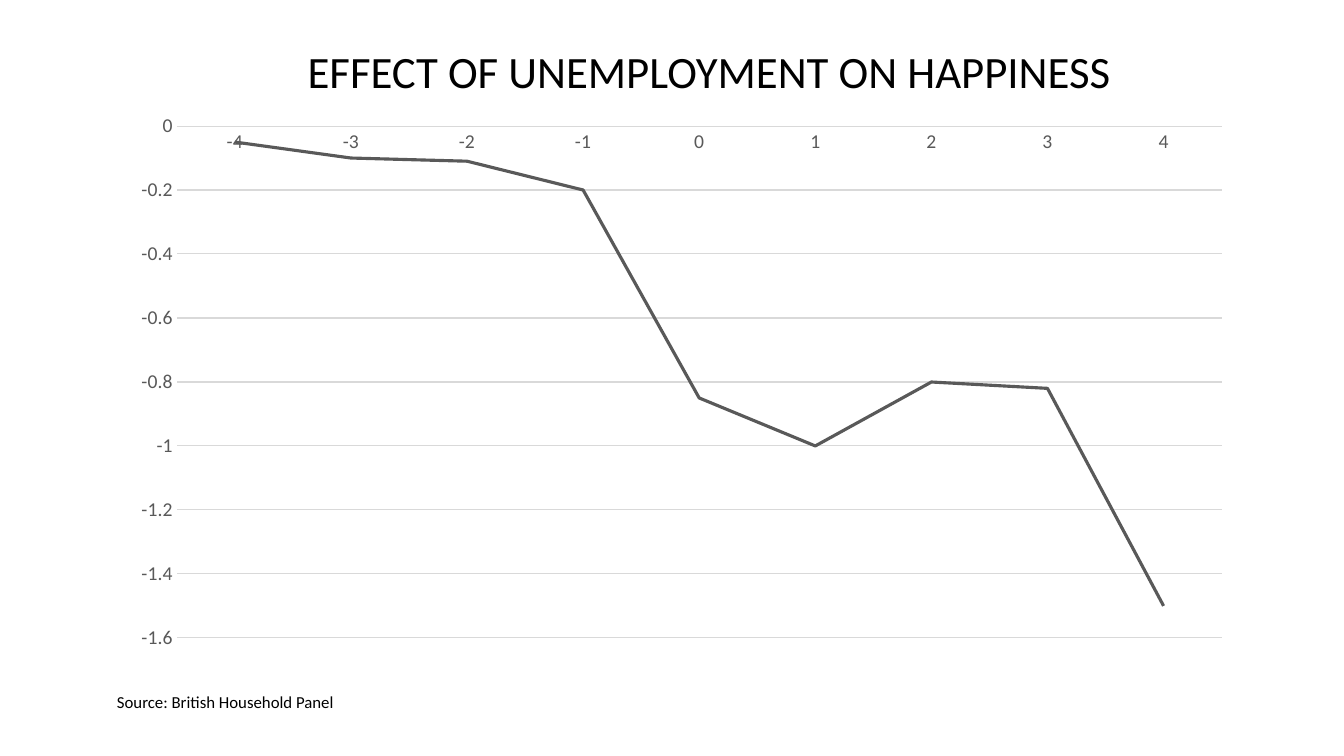
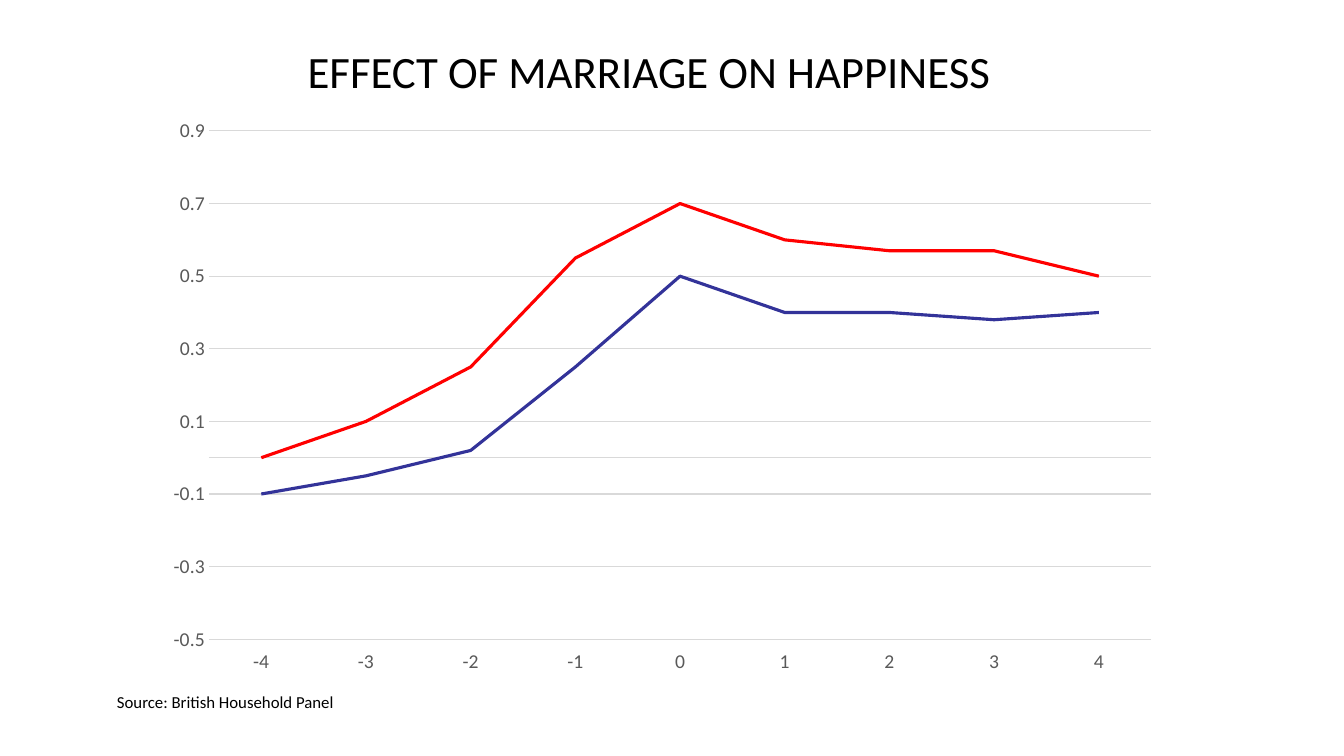
from pptx import Presentation, util as u
from pptx.chart.data import CategoryChartData
from pptx.dml.color import RGBColor
from pptx.enum import chart as ch, text

# Shared style
BLACK = RGBColor(0, 0, 0)
GREY = RGBColor(0x59, 0x59, 0x59)
PALE = RGBColor(0xD9, 0xD9, 0xD9)
BLUE = RGBColor(0x33, 0x33, 0x99)
RED = RGBColor(0xFF, 0, 0)
FACE = "Calibri"
WIDE, HIGH = 13.33, 7.5
HEAD = (3, 0.38, 8.42, 0.64)
FOOT = (1.11, 6.81, 2.28, 0.3)

# Content
SOURCE = "Source: British Household Panel"
YEARS = [str(n) for n in range(-4, 5)]
SLIDES = [
    {
        "title": "EFFECT OF UNEMPLOYMENT ON HAPPINESS",
        "area": (1.18, 1.02, 11.16, 5.54),
        "lines": [(GREY, (-0.05, -0.1, -0.11, -0.2, -0.85, -1, -0.8, -0.82, -1.5))],
        "scale": {},
        "labels": ch.XL_TICK_LABEL_POSITION.NEXT_TO_AXIS,
    },
    {
        "title": "EFFECT OF MARRIAGE ON HAPPINESS",
        "area": (1.52, 0.82, 10.1, 5.98),
        "lines": [
            (BLUE, (-0.1, -0.05, 0.02, 0.25, 0.5, 0.4, 0.4, 0.38, 0.4)),
            (RED, (0, 0.1, 0.25, 0.55, 0.7, 0.6, 0.57, 0.57, 0.5)),
        ],
        "scale": {"minimum_scale": -0.5, "maximum_scale": 1},
        "labels": ch.XL_TICK_LABEL_POSITION.LOW,
    },
]


def put(item, **values):
    for name, value in values.items():
        setattr(item, name, value)


def inches(box):
    return [u.Inches(n) for n in box]


def style(font, size, color):
    put(font, name=FACE, size=u.Pt(size))
    font.color.rgb = color


def ink(line, color, width):
    line.color.rgb = color
    line.width = u.Pt(width)


def write(shape, words, size, wrap):
    frame = shape.text_frame
    frame.text = words
    sides = ("left", "top", "right", "bottom")
    put(frame, word_wrap=wrap, vertical_anchor=text.MSO_ANCHOR.TOP,
        auto_size=text.MSO_AUTO_SIZE.SHAPE_TO_FIT_TEXT,
        **{f"margin_{side}": u.Inches(0.05) for side in sides})
    para = frame.paragraphs[0]
    para.alignment = text.PP_ALIGN.LEFT
    style(para.runs[0].font, size, BLACK)


def plot(slide, page):
    data = CategoryChartData()
    data.categories = YEARS
    for n, (_, vals) in enumerate(page["lines"], 1):
        data.add_series(f"Series {n}", vals)
    chart = slide.shapes.add_chart(
        ch.XL_CHART_TYPE.LINE, *inches(page["area"]), data).chart
    put(chart, has_legend=False, has_title=False)
    style(chart.font, 10, BLACK)
    chart.plots[0].vary_by_categories = False

    # Axes and grid
    cat, val = chart.category_axis, chart.value_axis
    for axis in (cat, val):
        put(axis, major_tick_mark=ch.XL_TICK_MARK.NONE,
            minor_tick_mark=ch.XL_TICK_MARK.NONE)
        style(axis.tick_labels.font, 14, GREY)
    cat.tick_label_position = page["labels"]
    ink(cat.format.line, PALE, 0.75)
    put(val, has_major_gridlines=True, major_unit=0.2, **page["scale"])
    val.format.line.fill.background()
    ink(val.major_gridlines.format.line, PALE, 0.75)
    put(val.tick_labels, number_format="General", number_format_is_linked=False)

    # Lines
    for line, (color, _) in zip(chart.plots[0].series, page["lines"]):
        line.smooth = False
        line.marker.style = ch.XL_MARKER_STYLE.NONE
        ink(line.format.line, color, 2.25)


def main():
    deck = Presentation()
    put(deck, slide_width=u.Inches(WIDE), slide_height=u.Inches(HIGH))
    for page in SLIDES:
        slide = deck.slides.add_slide(deck.slide_layouts[5])
        title = slide.shapes.title
        put(title, **dict(zip(("left", "top", "width", "height"), inches(HEAD))))
        write(title, page["title"], 32, True)
        plot(slide, page)
        write(slide.shapes.add_textbox(*inches(FOOT)), SOURCE, 12, False)
    deck.save("out.pptx")


if __name__ == "__main__":
    main()
